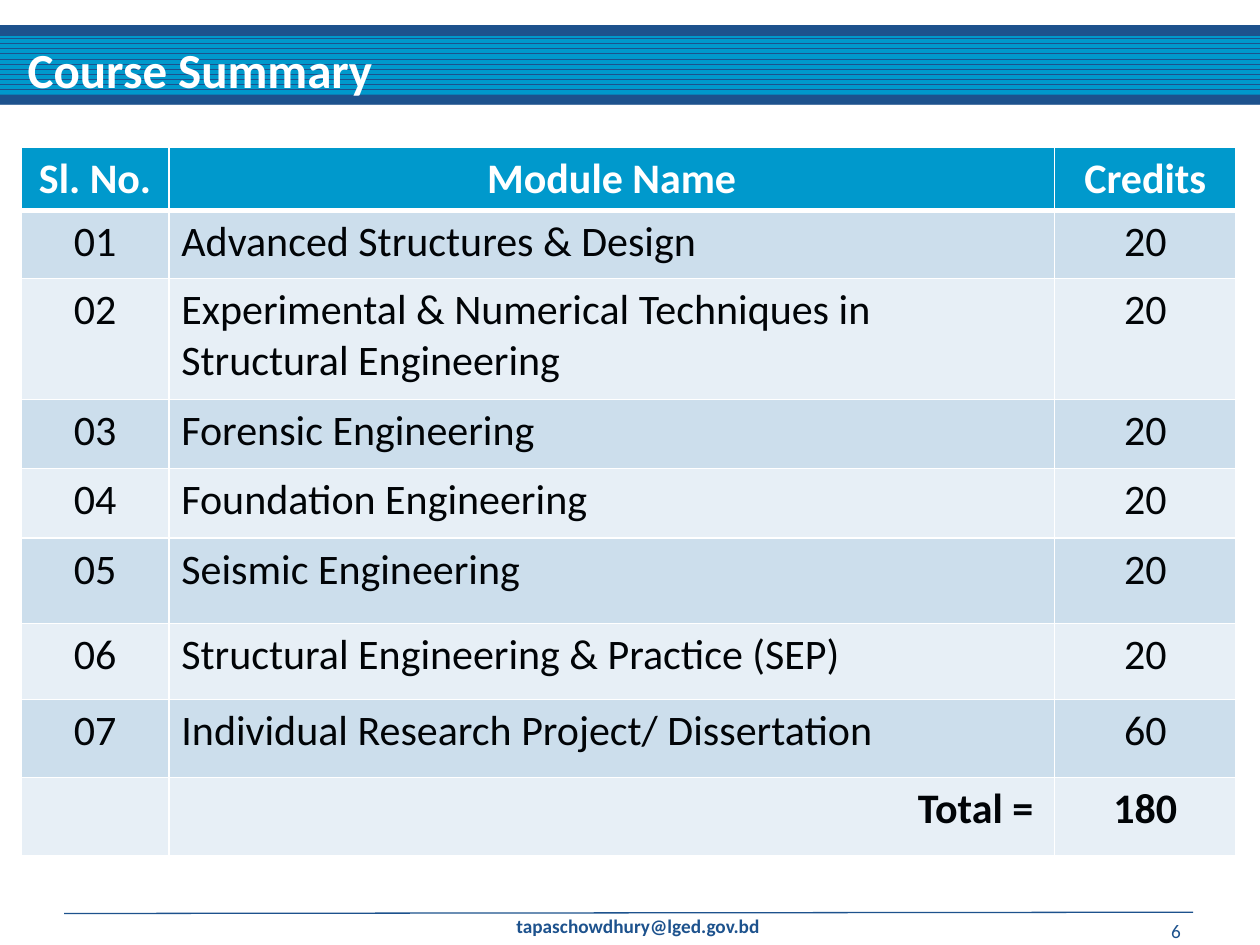
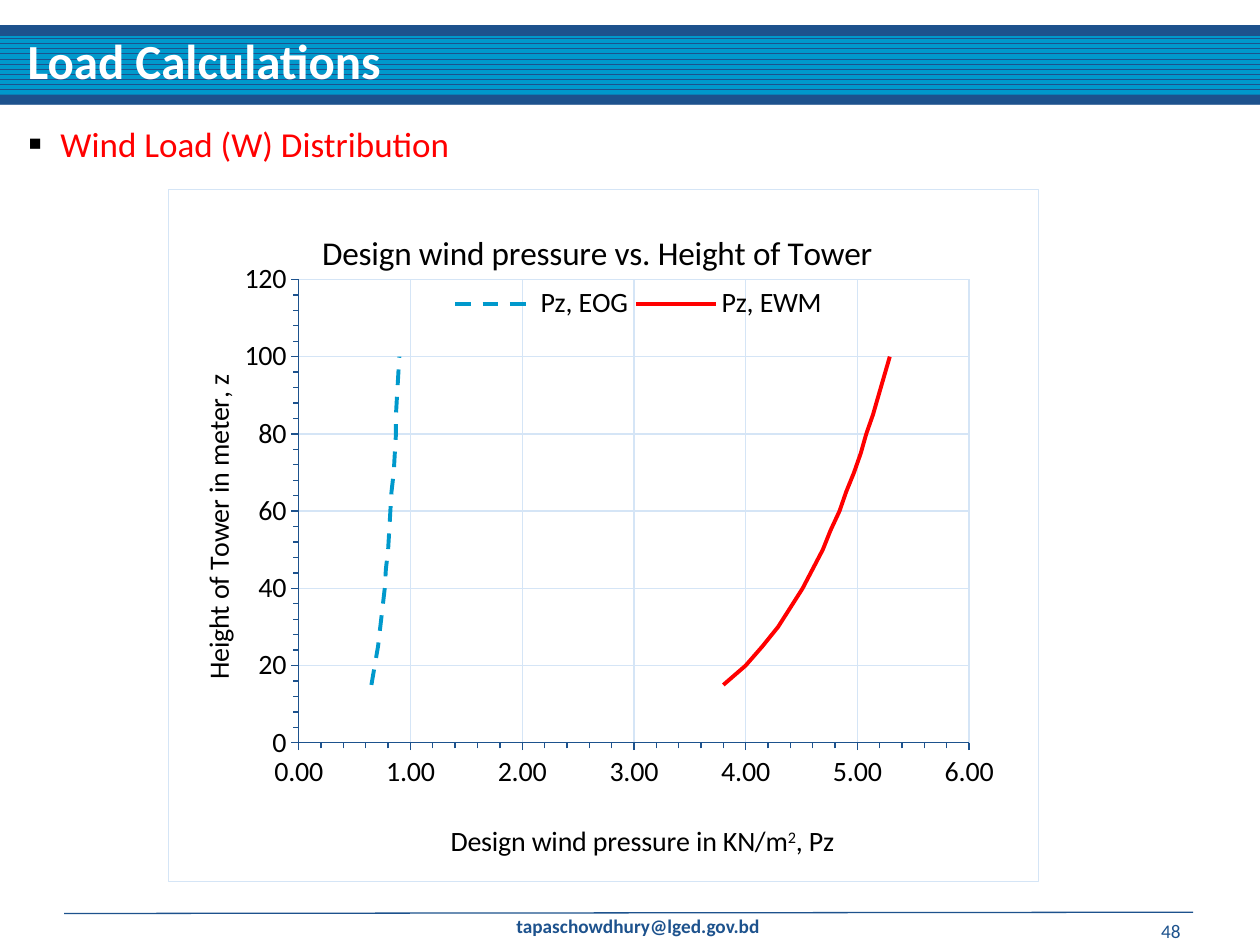
from lxml import etree
from pptx import Presentation
from pptx import util as u
from pptx.chart import data as chart_data
from pptx.dml import color
from pptx.enum import chart as charts, dml, shapes, text
from pptx.oxml import ns, parse_xml

NAVY, CYAN, WHITE, BLACK = "1D528D", "0099CC", "FFFFFF", "000000"
INK, RED, GRID = "010407", "FF0000", "D5E5F6"
BANDS = ("E7EFF6", "CCDEEC")
FONT = "Calibri"
LEFT, CENTER, RIGHT = text.PP_ALIGN.LEFT, text.PP_ALIGN.CENTER, text.PP_ALIGN.RIGHT
TITLE_FONT = {"size": u.Pt(28), "bold": True}
SMALL_FONT = {"size": u.Pt(11)}

MODULES = [
    ("01", "Advanced Structures & Design", "20"),
    ("02", "Experimental & Numerical Techniques in Structural Engineering", "20"),
    ("03", "Forensic Engineering", "20"),
    ("04", "Foundation Engineering", "20"),
    ("05", "Seismic Engineering", "20"),
    ("06", "Structural Engineering & Practice (SEP)", "20"),
    ("07", "Individual Research Project/ Dissertation", "60"),
]
ROW_HEIGHTS = [0.37, 0.54, 0.96, 0.55, 0.55, 0.68, 0.6, 0.62, 0.62]
COLUMN_WIDTHS = [1.17, 7.03, 1.44]

HEIGHTS = range(15, 101, 5)
PRESSURES = {
    "Pz, EOG": [0.65, 0.68, 0.71, 0.73, 0.75, 0.77, 0.78, 0.8, 0.81,
                0.82, 0.83, 0.85, 0.86, 0.87, 0.87, 0.88, 0.89, 0.9],
    "Pz, EWM": [3.8, 4, 4.15, 4.29, 4.4, 4.51, 4.6, 4.69, 4.76,
                4.84, 4.9, 4.97, 5.03, 5.08, 5.14, 5.19, 5.24, 5.29],
}
LINES = [(CYAN, dml.MSO_LINE.DASH), (RED, dml.MSO_LINE.SOLID)]


def rgb(value):
    return color.RGBColor.from_string(value)


def inches(*values):
    return [u.Inches(value) for value in values]


def assign(target, values):
    for name, value in values.items():
        setattr(target, name, value)


def set_font(font, hue, values):
    assign(font, {"name": FONT, **values})
    font.color.rgb = rgb(hue)


def set_line(line, hue, width=0.75):
    line.color.rgb = rgb(hue)
    line.width = u.Pt(width)


def write(frame, content, hue, values, align=LEFT, after=0):
    para = frame.paragraphs[0]
    para.text = content
    assign(para, {"alignment": align, "space_before": u.Pt(0), "space_after": u.Pt(after)})
    set_font(para.runs[0].font, hue, values)


def add_band(page, top, height, striped=False):
    band = page.shapes.add_shape(shapes.MSO_SHAPE.RECTANGLE, *inches(0, top, 10, height))
    band.shadow.inherit = False
    band.line.fill.background()
    if striped:
        band.fill.patterned()
        band.fill.pattern = dml.MSO_PATTERN.DARK_HORIZONTAL
        band.fill.fore_color.rgb = rgb(CYAN)
        band.fill.back_color.rgb = rgb(NAVY)
    else:
        band.fill.solid()
        band.fill.fore_color.rgb = rgb(NAVY)
    return band


def add_rule(page, start, end):
    rule = page.shapes.add_connector(shapes.MSO_CONNECTOR.STRAIGHT, *inches(*start, *end))
    set_line(rule.line, NAVY)
    etree.SubElement(rule._element.spPr, ns.qn("a:effectLst"))
    return rule


def add_label(page, place, content, values, align=LEFT, wrap=True):
    box = page.shapes.add_textbox(*inches(*place))
    box.text_frame.word_wrap = wrap
    write(box.text_frame, content, NAVY, values, align)
    return box


def decorate_master(deck, page):
    parts = [
        add_band(page, 0.2, 0.63),
        add_band(page, 0.28, 0.5, striped=True),
        add_rule(page, (0.51, 7.25), (9.47, 7.24)),
        add_band(page, 0.75, 0.08),
        add_label(page, (4, 7.21, 2.16, 0.29), "tapaschowdhury@lged.gov.bd",
                  {**SMALL_FONT, "bold": True}, wrap=False),
    ]
    tree = deck.slide_master.shapes._spTree
    for number, part in enumerate(parts):
        part._element.xpath(".//p:cNvPr")[0].set("id", str(20 + number))
        tree.insert(2 + number, part._element)


def move(box, place):
    assign(box, dict(zip(("left", "top", "width", "height"), inches(*place))))


def set_title(page, content, place):
    title = page.shapes.title
    move(title, place)
    assign(title.text_frame, {"word_wrap": False, "auto_size": text.MSO_AUTO_SIZE.NONE,
                              "vertical_anchor": text.MSO_ANCHOR.MIDDLE})
    write(title.text_frame, content, WHITE, TITLE_FONT)


def add_page_number(page, number):
    add_label(page, (7.14, 7.25, 2.33, 0.25), number, SMALL_FONT, RIGHT)


def set_bullet(page, content, place):
    body = page.placeholders[1]
    move(body, place)
    para = body.text_frame.paragraphs[0]
    props = para._p.get_or_add_pPr()
    props.set("marL", str(u.Inches(0.25)))
    props.set("indent", str(-u.Inches(0.25)))
    hue = etree.SubElement(props, ns.qn("a:buClr"))
    etree.SubElement(hue, ns.qn("a:srgbClr"), val=BLACK)
    etree.SubElement(props, ns.qn("a:buSzPct"), val="60000")
    etree.SubElement(props, ns.qn("a:buFont"), typeface="Arial")
    etree.SubElement(props, ns.qn("a:buChar"), char="■")
    write(body.text_frame, content, RED, {"size": u.Pt(20)}, after=6)


def set_borders(cell, bottom):
    props = cell._tc.get_or_add_tcPr()
    for order, side in enumerate(("lnL", "lnR", "lnT", "lnB")):
        width = u.Pt(bottom if side == "lnB" else 1)
        props.insert(order, parse_xml(
            f'<a:{side} {ns.nsdecls("a")} w="{width}"><a:solidFill>'
            f'<a:srgbClr val="{WHITE}"/></a:solidFill></a:{side}>'))


def add_module_table(page):
    rows = [("Sl. No.", "Module Name", "Credits"), *MODULES, ("", "Total =", "180")]
    last = len(rows) - 1
    table = page.shapes.add_table(len(rows), 3, *inches(0.17, 1.17, 9.63, 5.63)).table
    for column, width in zip(table.columns, COLUMN_WIDTHS):
        column.width = u.Inches(width)
    for index, (row, height) in enumerate(zip(rows, ROW_HEIGHTS)):
        table.rows[index].height = u.Inches(height)
        heading = index == 0
        values = {"size": u.Pt(24), "bold": index in (0, last)}
        for place, content in enumerate(row):
            cell = table.cell(index, place)
            cell.fill.solid()
            cell.fill.fore_color.rgb = rgb(CYAN if heading else BANDS[index % 2])
            set_borders(cell, 3 if heading else 1)
            align = CENTER
            if place == 1 and not heading:
                align = RIGHT if index == last else LEFT
            if align == RIGHT:
                cell.margin_right = u.Inches(0.17)
            if content:
                write(cell.text_frame, content, WHITE if heading else INK,
                      values, align, 0 if heading else 6)


def set_layout(element, after, target="", **edges):
    for old in element.findall(ns.qn("c:layout")):
        element.remove(old)
    items = "".join(f'<c:{name} val="{value}"/>' for name, value in edges.items())
    layout = parse_xml(
        f'<c:layout {ns.nsdecls("c")}><c:manualLayout>{target}<c:xMode val="edge"/>'
        f'<c:yMode val="edge"/>{items}</c:manualLayout></c:layout>')
    if after:
        element.find(ns.qn(after)).addnext(layout)
    else:
        element.insert(0, layout)


def write_chart_title(title, spans, size, x, y):
    para = title.text_frame.paragraphs[0]
    for content, baseline in spans:
        span = para.add_run()
        span.text = content
        set_font(span.font, BLACK, {"size": u.Pt(size), "bold": False})
        if baseline:
            span.font._element.set("baseline", str(baseline))
    set_layout(title._element, "c:tx", x=x, y=y)


def format_axis(axis, top, major, minor, number_format):
    assign(axis, {"minimum_scale": 0, "maximum_scale": top, "major_unit": major,
                  "minor_unit": minor, "has_major_gridlines": True,
                  "major_tick_mark": charts.XL_TICK_MARK.OUTSIDE,
                  "minor_tick_mark": charts.XL_TICK_MARK.OUTSIDE})
    assign(axis.tick_labels, {"number_format": number_format,
                              "number_format_is_linked": False})
    set_line(axis.format.line, NAVY)
    set_line(axis.major_gridlines.format.line, GRID)


def add_wind_chart(page):
    source = chart_data.XyChartData()
    for name, pressures in PRESSURES.items():
        series = source.add_series(name)
        for pressure, height in zip(pressures, HEIGHTS):
            series.add_data_point(pressure, height)
    chart = page.shapes.add_chart(charts.XL_CHART_TYPE.XY_SCATTER_SMOOTH_NO_MARKERS,
                                  *inches(1.33, 1.5, 6.92, 5.5), source).chart
    set_font(chart.font, BLACK, {"size": u.Pt(16)})
    assign(chart, {"has_title": True, "has_legend": True})
    chart.plots[0].vary_by_categories = False
    for series, (hue, dash) in zip(chart.plots[0].series, LINES):
        set_line(series.format.line, hue, 2.25)
        series.format.line.dash_style = dash
        series.smooth = True
        series.marker.style = charts.XL_MARKER_STYLE.NONE

    format_axis(chart.category_axis, 6, 1, 0.2, "0.00")
    format_axis(chart.value_axis, 120, 20, 4, "General")
    write_chart_title(chart.chart_title, [("Design wind pressure vs. Height of Tower", 0)],
                      19, 0.17, 0.05)
    write_chart_title(chart.category_axis.axis_title,
                      [("Design wind pressure in KN/m", 0), ("2", 30000), (", Pz", 0)],
                      16, 0.32, 0.91)
    write_chart_title(chart.value_axis.axis_title, [("Height of Tower in meter, z", 0)],
                      16, 0.03, 0.26)

    assign(chart.legend, {"position": charts.XL_LEGEND_POSITION.RIGHT,
                          "include_in_layout": True})
    set_layout(chart.legend._element, "c:legendPos", x=0.32, y=0.13, w=0.44, h=0.07)
    root = chart._chartSpace.find(ns.qn("c:chart"))
    set_layout(root.find(ns.qn("c:plotArea")), None, '<c:layoutTarget val="inner"/>',
               x=0.15, y=0.13, w=0.77, h=0.67)
    root.addnext(parse_xml(
        f'<c:spPr {ns.nsdecls("c", "a")}><a:solidFill><a:srgbClr val="{WHITE}"/></a:solidFill>'
        f'<a:ln w="{u.Pt(0.75)}"><a:solidFill><a:srgbClr val="{GRID}"/></a:solidFill></a:ln>'
        '</c:spPr>'))


def main():
    deck = Presentation()
    assign(deck, {"slide_width": u.Inches(10), "slide_height": u.Inches(7.5)})

    summary = deck.slides.add_slide(deck.slide_layouts[5])
    decorate_master(deck, summary)
    set_title(summary, "Course Summary", (0.12, 0.26, 2.97, 0.57))
    add_page_number(summary, "6")
    add_module_table(summary)

    loads = deck.slides.add_slide(deck.slide_layouts[1])
    set_title(loads, "Load Calculations", (0.12, 0.19, 3.05, 0.57))
    add_page_number(loads, "48")
    set_bullet(loads, "Wind Load (W) Distribution", (0.13, 0.92, 9.75, 0.43))
    add_wind_chart(loads)

    deck.save("out.pptx")


if __name__ == "__main__":
    main()
